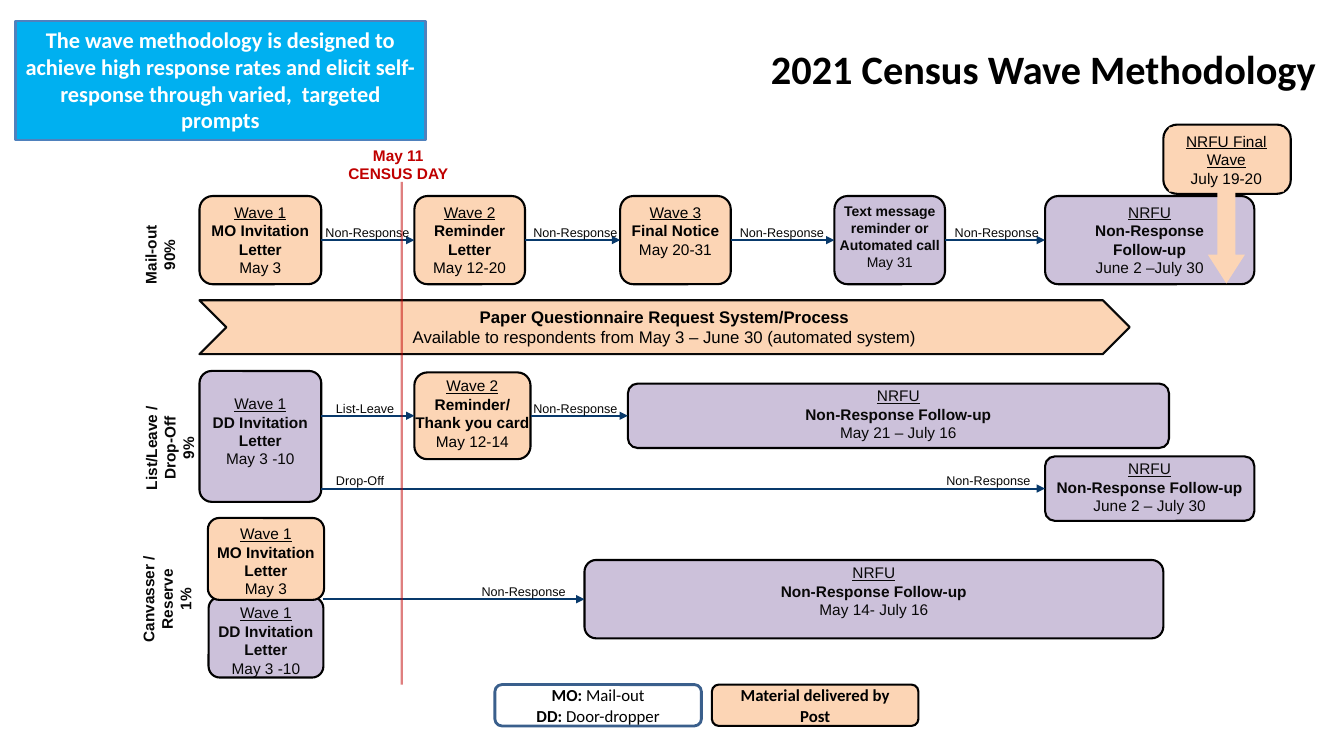
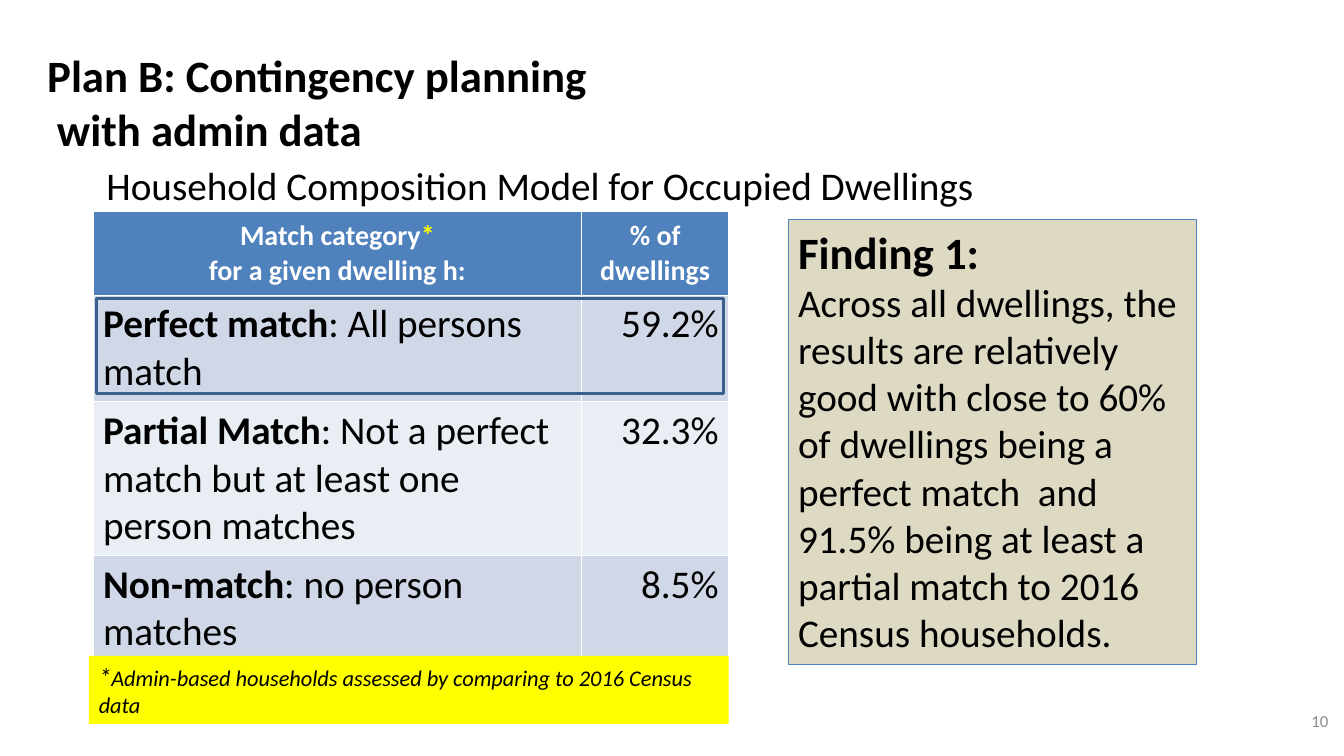
from lxml.etree import SubElement
from pptx import Presentation
from pptx.dml.color import RGBColor
from pptx.enum.shapes import MSO_CONNECTOR, MSO_SHAPE
from pptx.enum.text import MSO_ANCHOR, MSO_AUTO_SIZE, PP_ALIGN
from pptx.oxml.ns import qn
from pptx.util import Pt

BLACK, INK, WHITE = "000000", "080808", "FFFFFF"
PEACH, LILAC, NAVY, RED = "FCD5B5", "CCC1DA", "08396B", "C00000"
BLUE, DARK_BLUE, YELLOW = "4F81BD", "3A5F8C", "FFFF00"
HEADING, DIAGRAM = "Calibri", "Arial"
LEFT, CENTER, RIGHT = PP_ALIGN.LEFT, PP_ALIGN.CENTER, PP_ALIGN.RIGHT
TOP, MIDDLE = MSO_ANCHOR.TOP, MSO_ANCHOR.MIDDLE
LEFT_SIDE, RIGHT_SIDE = 1, 3


def rgb(hex_color):
    return RGBColor.from_string(hex_color)


def write(frame, text, font=HEADING, size=12, color=BLACK, bold=False, italic=False,
          underline=False, align=LEFT, same_line=False):
    """Add one paragraph per line of text, or continue the last paragraph."""
    for line in text.split("\n"):
        paragraph = frame.paragraphs[-1]
        if paragraph.runs and not same_line:
            paragraph = frame.add_paragraph()
        paragraph.alignment = align
        run = paragraph.add_run()
        run.text = line
        run.font.name, run.font.size = font, Pt(size)
        run.font.color.rgb = rgb(color)
        run.font.bold, run.font.italic, run.font.underline = bold, italic, underline


def set_frame(frame, margins, anchor, wrap=True):
    """Margins are the side, top and bottom insets in points."""
    side, top, bottom = margins
    frame.auto_size = MSO_AUTO_SIZE.NONE
    frame.word_wrap = wrap
    frame.vertical_anchor = anchor
    frame.margin_left = frame.margin_right = Pt(side)
    frame.margin_top, frame.margin_bottom = Pt(top), Pt(bottom)


class Deck:
    """Holds the style and the slide being drawn; lengths are in points."""
    margins = (7.2, 3.6, 3.6)

    def __init__(self):
        self.presentation = Presentation()
        self.presentation.slide_width = Pt(960)
        self.presentation.slide_height = Pt(540)
        self.slide = None

    def new_slide(self, title, left, top, width, height, size):
        layout = self.presentation.slide_layouts.get_by_name("Title Only")
        self.slide = self.presentation.slides.add_slide(layout)
        shape = self.slide.shapes.title
        shape.left, shape.top = Pt(left), Pt(top)
        shape.width, shape.height = Pt(width), Pt(height)
        set_frame(shape.text_frame, self.margins, MIDDLE)
        write(shape.text_frame, title, size=size, bold=True)
        return shape

    def text(self, left, top, width, height, margins=margins, anchor=TOP):
        shape = self.slide.shapes.add_textbox(Pt(left), Pt(top), Pt(width), Pt(height))
        set_frame(shape.text_frame, margins, anchor)
        return shape

    def box(self, left, top, width, height, fill=None, line=None, line_width=1.5,
            kind=MSO_SHAPE.RECTANGLE, adjustments=(), margins=margins, anchor=MIDDLE, wrap=True):
        shape = self.slide.shapes.add_shape(kind, Pt(left), Pt(top), Pt(width), Pt(height))
        shape.shadow.inherit = False
        for index, value in enumerate(adjustments):
            shape.adjustments[index] = value
        if fill:
            shape.fill.solid()
            shape.fill.fore_color.rgb = rgb(fill)
        else:
            shape.fill.background()
        if line:
            shape.line.color.rgb = rgb(line)
            shape.line.width = Pt(line_width)
        else:
            shape.line.fill.background()
        set_frame(shape.text_frame, margins, anchor, wrap)
        return shape

    def card(self, left, top, width, height, fill, heading, name, date,
             size=11, text_top=2, corner=0.15):
        """Draw a rounded step: underlined heading, bold name, plain date."""
        shape = self.box(left, top, width, height, fill, BLACK, kind=MSO_SHAPE.ROUNDED_RECTANGLE,
                         adjustments=[corner], margins=(0, text_top, 0), anchor=TOP, wrap=False)
        style = dict(font=DIAGRAM, size=size, align=CENTER, color=INK if fill == LILAC else BLACK)
        if heading:
            write(shape.text_frame, heading, underline=True, **style)
        write(shape.text_frame, name, bold=True, **style)
        write(shape.text_frame, date, **style)
        return shape

    def label(self, left, top, text):
        shape = self.text(left, top, 66, 11, margins=(0, 0, 0))
        write(shape.text_frame, text, font=DIAGRAM, size=9, color=INK)

    def side_label(self, center_x, center_y, text):
        """Write bold lines that read upwards around a centre point."""
        width, height = 104, 40
        shape = self.text(center_x - width / 2, center_y - height / 2, width, height,
                          (0, 0, 0), MIDDLE)
        shape.rotation = 270
        write(shape.text_frame, text, font=DIAGRAM, size=11, color=INK, bold=True, align=CENTER)

    def line(self, begin, end, color):
        """Draw a straight line; each end is a point or a shape to join."""
        points = [(0, 0) if hasattr(item, "text_frame") else item for item in (begin, end)]
        connector = self.slide.shapes.add_connector(
            MSO_CONNECTOR.STRAIGHT, *(Pt(value) for point in points for value in point))
        if hasattr(begin, "text_frame"):
            connector.begin_connect(begin, RIGHT_SIDE)
        if hasattr(end, "text_frame"):
            connector.end_connect(end, LEFT_SIDE)
        connector.line.color.rgb = rgb(color)
        connector.line.width = Pt(1.5)
        SubElement(connector.element.spPr, qn("a:effectLst"))
        return connector

    def arrow(self, begin, end):
        connector = self.line(begin, end, NAVY)
        outline = connector.element.spPr.find(qn("a:ln"))
        SubElement(outline, qn("a:tailEnd"), type="triangle")

    def table(self, left, top, column_widths, row_heights):
        frame = self.slide.shapes.add_table(
            len(row_heights), len(column_widths), Pt(left), Pt(top),
            Pt(sum(column_widths)), Pt(sum(row_heights)))
        for column, width in zip(frame.table.columns, column_widths):
            column.width = Pt(width)
        for row, height in zip(frame.table.rows, row_heights):
            row.height = Pt(height)
        return frame.table


def build_wave_slide(deck):
    deck.new_slide("2021 Census Wave Methodology", 543.5, 9.5, 407, 79, 28.8)
    deck.box(831, 89, 91, 49.5, PEACH, BLACK, kind=MSO_SHAPE.ROUNDED_RECTANGLE, adjustments=[0.2])

    # Mail-out
    follow_up = "Non-Response Follow-up"
    mail_out = [deck.card(left, 140, width, 63, *content) for left, width, *content in (
        (142.5, 87, PEACH, "Wave 1", "MO Invitation\nLetter", "May 3"),
        (296, 79, PEACH, "Wave 2", "Reminder\nLetter", "May 12-20"),
        (443, 79, PEACH, "Wave 3", "Final Notice", "May 20-31"),
        (596, 79, LILAC, None, "Text message\nreminder or\nAutomated call", "May 31", 10),
        (746.5, 149.5, LILAC, "NRFU", "Non-Response\nFollow-up", "June 2 –July 30"))]

    # List/Leave and Drop-Off
    deck.card(142.5, 265, 87, 93.5, LILAC, "Wave 1", "DD Invitation\nLetter", "May 3 -10",
              text_top=14, corner=0.1)
    thank_you = deck.card(296, 266, 83, 62, PEACH, "Wave 2", "Reminder/\nThank you card",
                          "May 12-14", text_top=0)
    list_follow_up = deck.card(448.5, 274, 386.5, 46, LILAC, "NRFU", follow_up,
                               "May 21 – July 16", text_top=0)
    drop_follow_up = deck.card(746.5, 326, 149.5, 46, LILAC, "NRFU", follow_up,
                               "June 2 – July 30", text_top=0)

    # Canvasser
    reserve_follow_up = deck.card(417.5, 400, 413.5, 56, LILAC, "NRFU", follow_up,
                                  "May 14- July 16", text_top=0)

    for begin, end in zip(mail_out, mail_out[1:]):
        deck.arrow(begin, end)
    deck.arrow((229.5, 297), thank_you)
    deck.arrow(thank_you, list_follow_up)
    deck.arrow((229.5, 349), drop_follow_up)
    deck.arrow((231, 428), reserve_follow_up)

    for left, top in ((232.5, 161), (381, 161), (528.5, 161), (682, 161),
                      (381, 286.5), (676, 338), (344, 417)):
        deck.label(left, top, "Non-Response")
    deck.label(240, 286.5, "List-Leave")
    deck.label(240, 338, "Drop-Off")

    deck.side_label(114, 182, "Mail-out\n90%")
    deck.side_label(121, 320, "List/Leave /\nDrop-Off\n9%")
    deck.side_label(119, 428, "Canvasser /\nReserve\n1%")

    chevron = deck.box(142.5, 214.5, 664.5, 38.5, PEACH, INK, kind=MSO_SHAPE.CHEVRON)
    style = dict(font=DIAGRAM, align=CENTER)
    write(chevron.text_frame, "Paper Questionnaire Request System/Process", bold=True, **style)
    write(chevron.text_frame,
          "Available to respondents from May 3 – June 30 (automated system)", **style)

    census_day = deck.text(234, 104, 101, 27, margins=(0, 0, 0))
    write(census_day.text_frame, "May 11\nCENSUS DAY", size=11, color=RED, bold=True, **style)
    day_line = deck.line((287, 130), (287, 489), RED)
    for color in day_line.element.spPr.iter(qn("a:srgbClr")):
        SubElement(color, qn("a:alpha"), val="50000")

    final_wave = deck.box(835, 91, 82, 111.5, PEACH, kind=MSO_SHAPE.DOWN_ARROW_CALLOUT,
                          adjustments=[0.155, 0.161, 0.25, 0.411])
    write(final_wave.text_frame, "NRFU Final Wave", size=11, underline=True, **style)
    write(final_wave.text_frame, "July 19-20", size=11, **style)

    deck.card(149, 426.5, 82, 57.5, LILAC, "Wave 1", "DD Invitation\nLetter", "May 3 -10",
              corner=0.14)
    deck.card(148.5, 370, 83, 58.5, PEACH, "Wave 1", "MO Invitation\nLetter", "May 3",
              corner=0.14)

    legend = dict(top=489, width=147.5, height=29.5, kind=MSO_SHAPE.ROUNDED_RECTANGLE)
    abbreviations = deck.box(353.5, line=DARK_BLUE, line_width=2, **legend)
    for short, meaning in (("MO: ", "Mail-out"), ("DD: ", "Door-dropper")):
        write(abbreviations.text_frame, short, bold=True, align=CENTER)
        write(abbreviations.text_frame, meaning, align=CENTER, same_line=True)
    delivery = deck.box(508.5, fill=PEACH, line=BLACK, **legend)
    write(delivery.text_frame, "Material delivered by Post", bold=True, align=CENTER)

    message = deck.box(11, 15, 293, 85, "00B0F0", BLUE, 1.75, anchor=TOP)
    write(message.text_frame, "The wave methodology is designed to achieve high response rates "
          "and elicit self-response through varied,  targeted prompts",
          size=16, color=WHITE, bold=True, align=CENTER)


def build_contingency_slide(deck):
    title = deck.new_slide("Plan B: Contingency planning\nwith admin data",
                           26.5, 45.5, 408, 54.5, 32)
    second_line = title.text_frame.paragraphs[1]
    second_line._p.get_or_add_pPr().set("marL", str(Pt(7)))

    number = deck.text(732, 500.5, 224, 29, anchor=MIDDLE)
    write(number.text_frame, "10", color="8C8C8C", align=RIGHT)

    table = deck.table(66.5, 151, (349, 105), (60, 76, 110, 76))
    category, share = table.rows[0].cells
    header = dict(size=20, color=WHITE, bold=True, align=CENTER)
    write(category.text_frame, "Match category", **header)
    write(category.text_frame, "*", same_line=True, **{**header, "color": YELLOW})
    write(category.text_frame, "for a given dwelling h:", **header)
    write(share.text_frame, "% of dwellings", **header)
    for cell in (category, share):
        cell.vertical_anchor = MIDDLE
        cell.fill.solid()
        cell.fill.fore_color.rgb = rgb(BLUE)

    matches = (
        ("Perfect match", ": All persons match", "59.2%", "D0D8E8"),
        ("Partial Match", ": Not a perfect match but at least one person matches",
         "32.3%", "E9EDF4"),
        ("Non-match", ": no person matches", "8.5%", "D0D8E8"))
    for row_index, (name, meaning, percent, fill) in enumerate(matches, start=1):
        category, share = table.cell(row_index, 0), table.cell(row_index, 1)
        write(category.text_frame, name, size=28, bold=True)
        write(category.text_frame, meaning, size=28, same_line=True)
        write(share.text_frame, percent, size=28, align=RIGHT)
        for cell in (category, share):
            cell.fill.solid()
            cell.fill.fore_color.rgb = rgb(fill)

    subtitle = deck.text(69, 111.5, 773, 41)
    write(subtitle.text_frame, "Household Composition Model for Occupied Dwellings", size=28)

    deck.box(69, 213, 448, 68, line=DARK_BLUE, line_width=2)

    finding = deck.box(563, 157, 291.5, 317.5, "DDD9C3", BLUE, 0.75, anchor=TOP)
    write(finding.text_frame, "Finding 1:", size=32, bold=True)
    write(finding.text_frame, "Across all dwellings, the results are relatively good with close "
          "to 60% of dwellings being a perfect match  and 91.5% being at least a partial match "
          "to 2016 Census households.", size=28)

    footnote = deck.box(63.5, 468.5, 457, 48.5, YELLOW, anchor=TOP)
    write(footnote.text_frame, "*", size=18, italic=True)
    write(footnote.text_frame, "Admin-based households assessed by comparing to 2016 Census data",
          size=16, italic=True, same_line=True)


def main():
    deck = Deck()
    build_wave_slide(deck)
    build_contingency_slide(deck)
    deck.presentation.save("out.pptx")


if __name__ == "__main__":
    main()
